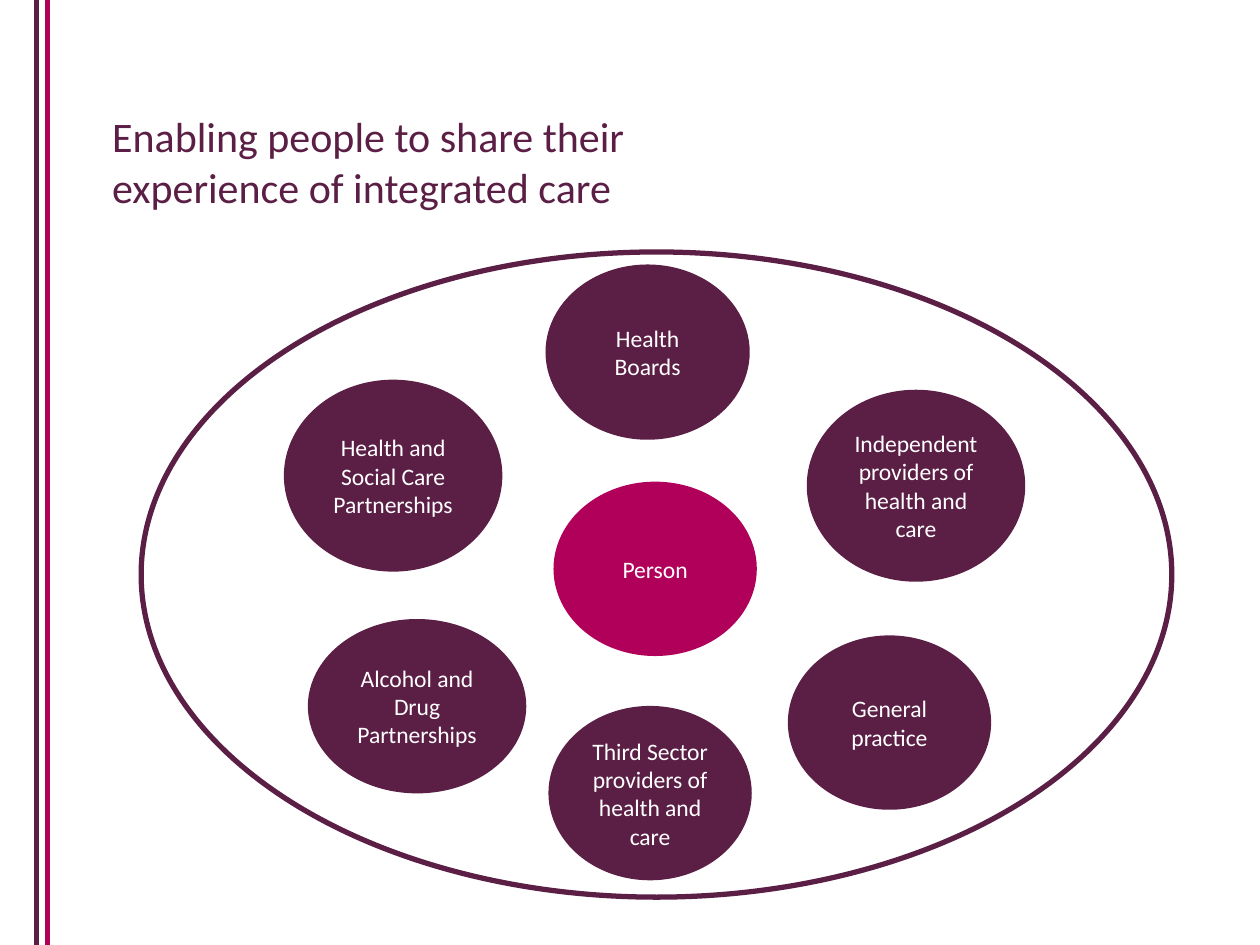
import pptx
import pptx.dml.color
import pptx.enum.shapes
import pptx.enum.text
import pptx.oxml.ns
import pptx.util
from lxml import etree
from pptx.util import Inches

COLOURS = {"plum": "5B1E45", "magenta": "B10059", "white": "FFFFFF"}
FONT = "Calibri"
LARGE, MEDIUM, SMALL = (1.72, 1.51), (1.72, 1.37), (1.6, 1.37)
CIRCLES = [
    ("Health and Social Care Partnerships", (2.26, 3.02), LARGE, "plum", 1),
    ("Health Boards", (4.34, 2.11), SMALL, "plum", 1.5),
    ("Independent providers of health and care", (6.41, 3.1), LARGE, "plum", 1),
    ("Third Sector providers of health and care", (4.36, 5.61), SMALL, "plum", 1),
    ("Alcohol and Drug Partnerships", (2.45, 4.92), MEDIUM, "plum", 1),
    ("General practice", (6.26, 5.05), SMALL, "plum", 1),
    ("Person", (4.4, 3.83), SMALL, "magenta", 1),
]


def colour(name):
    """Return the named palette colour."""
    return pptx.dml.color.RGBColor.from_string(COLOURS[name])


def add_span(para, text, size, colour_name):
    """Add one formatted run to a paragraph."""
    span = para.add_run()
    span.text = text
    span.font.name = FONT
    span.font.size = pptx.util.Pt(size)
    span.font.color.rgb = colour(colour_name)


def add_stripe(page, x, colour_name):
    """Draw a vertical stripe down the left margin."""
    stripe = page.shapes.add_connector(
        pptx.enum.shapes.MSO_CONNECTOR.STRAIGHT,
        Inches(x), Inches(0), Inches(x), Inches(7.5))
    stripe.line.color.rgb = colour(colour_name)
    stripe.line.width = pptx.util.Pt(3)
    etree.SubElement(stripe._element.spPr, pptx.oxml.ns.qn("a:effectLst"))


def add_ellipse(page, position, size, colour_name, line_width):
    """Draw an unfilled, outlined ellipse and return it."""
    ellipse = page.shapes.add_shape(
        pptx.enum.shapes.MSO_SHAPE.OVAL,
        *(Inches(length) for length in position + size))
    ellipse.shadow.inherit = False
    ellipse.fill.background()
    ellipse.line.color.rgb = colour(colour_name)
    ellipse.line.width = pptx.util.Pt(line_width)
    return ellipse


def add_circle(page, label, position, size, colour_name, line_width):
    """Draw a filled ellipse with a centred label."""
    circle = add_ellipse(page, position, size, colour_name, line_width)
    circle.fill.solid()
    circle.fill.fore_color.rgb = colour(colour_name)
    frame = circle.text_frame
    frame.word_wrap = True
    frame.vertical_anchor = pptx.enum.text.MSO_ANCHOR.MIDDLE
    para = frame.paragraphs[0]
    para.alignment = pptx.enum.text.PP_ALIGN.CENTER
    add_span(para, label, 13.5, "white")


def set_title(page, text):
    """Place and format the title placeholder."""
    title = page.shapes.title
    title.left, title.top = Inches(0.79), Inches(0.83)
    title.width, title.height = Inches(4.65), Inches(0.91)
    frame = title.text_frame
    frame.word_wrap = True
    frame.auto_size = pptx.enum.text.MSO_AUTO_SIZE.NONE
    frame.vertical_anchor = pptx.enum.text.MSO_ANCHOR.TOP
    para = frame.paragraphs[0]
    para.alignment = pptx.enum.text.PP_ALIGN.LEFT
    add_span(para, text, 24, "plum")


def main():
    """Build the slide and save it."""
    deck = pptx.Presentation()
    deck.slide_width, deck.slide_height = Inches(10), Inches(7.5)
    page = deck.slides.add_slide(deck.slide_layouts.get_by_name("Title Only"))
    add_stripe(page, 0.29, "plum")
    add_stripe(page, 0.38, "magenta")
    for circle in CIRCLES:
        add_circle(page, *circle)
    add_ellipse(page, (1.12, 2), (8.18, 5.12), "plum", 3)
    set_title(page, "Enabling people to share their experience of integrated care")
    deck.save("out.pptx")


if __name__ == "__main__":
    main()
